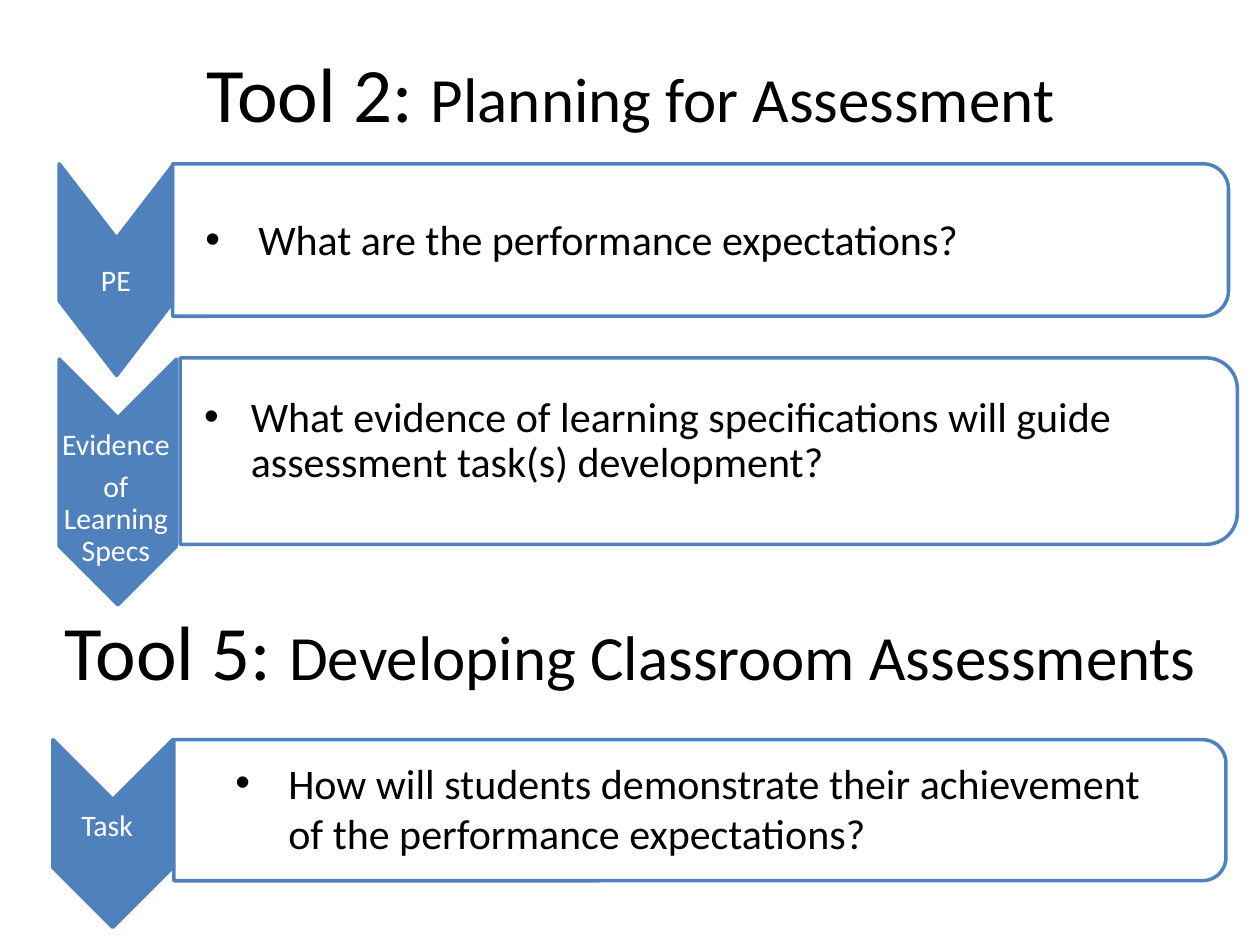
from dataclasses import dataclass
from lxml.etree import SubElement
from pptx import Presentation
from pptx.dml.color import RGBColor
from pptx.enum.shapes import MSO_SHAPE
from pptx.enum.text import MSO_ANCHOR, PP_ALIGN
from pptx.oxml.ns import qn
from pptx.util import Inches, Pt


@dataclass(frozen=True)
class Theme:
    font: str = "Calibri"
    blue: RGBColor = RGBColor(0x4F, 0x81, 0xBD)
    white: RGBColor = RGBColor(0xFF, 0xFF, 0xFF)
    black: RGBColor = RGBColor(0, 0, 0)
    tool: int = 44
    topic: int = 36
    question: int = 24
    label: int = 17
    outline: int = 2
    panel_opacity: int = 89


THEME = Theme()


@dataclass(frozen=True)
class Step:
    """One arrow and its panel; boxes are left, top, width, height in inches."""
    arrow: tuple
    point: float
    label_box: tuple
    label: tuple
    panel: tuple
    question_box: tuple
    question: str
    indent: tuple
    inset: tuple = (0.18, 0.02, 0.02, 0.02)
    anchor: MSO_ANCHOR = MSO_ANCHOR.MIDDLE
    spacing: float = 0.9


STEPS = (
    Step((0.47, 1.3, 0.91, 1.68), 0.65, (0.47, 1.96, 0.9, 0.56), ("PE",),
         (1.37, 1.3, 8.38, 1.21), (1.37, 1.37, 8.34, 1.1),
         "What are the performance expectations?", (0.5, -0.42)),
    Step((0.47, 2.85, 0.93, 1.95), 0.5, (0.47, 3.68, 0.9, 0.56),
         ("Evidence", "of Learning Specs"),
         (1.43, 2.84, 8.39, 1.48), (1.44, 2.88, 8.18, 1.25),
         "What evidence of learning specifications will guide "
         "assessment task(s) development?", (0.37, -0.37)),
    Step((0.42, 5.87, 0.95, 1.49), 0.5, (0.44, 6.27, 0.82, 0.59), ("Task",),
         (1.38, 5.87, 8.35, 1.12), (1.69, 5.91, 7.8, 0.68),
         "How will students demonstrate their achievement "
         "of the performance expectations?", (0.5, -0.42),
         (0.1, 0.1, 0.1, 0.1), MSO_ANCHOR.TOP, 1.0),
)


def style_run(run, size, color):
    run.font.name = THEME.font
    run.font.size = Pt(size)
    run.font.color.rgb = color


def add_text_frame(page, box, inset, anchor=MSO_ANCHOR.MIDDLE):
    frame = page.shapes.add_textbox(*map(Inches, box)).text_frame
    frame.word_wrap = True
    frame.vertical_anchor = anchor
    (frame.margin_left, frame.margin_top,
     frame.margin_right, frame.margin_bottom) = map(Inches, inset)
    return frame


def add_turned_shape(page, preset, box, adjustments, fill):
    """Add a shape turned a quarter clockwise so that it covers the box."""
    left, top, width, height = box
    shift = (width - height) / 2
    shape = page.shapes.add_shape(
        preset, *map(Inches, (left + shift, top - shift, height, width)))
    shape.rotation = 90
    shape.shadow.inherit = False
    for index, value in enumerate(adjustments):
        shape.adjustments[index] = value
    shape.fill.solid()
    shape.fill.fore_color.rgb = fill
    shape.line.color.rgb = THEME.blue
    shape.line.width = Pt(THEME.outline)
    return shape


def add_bullet(para, indent):
    properties = para._p.get_or_add_pPr()
    left, hanging = indent
    properties.set("marL", str(Inches(left)))
    properties.set("indent", str(Inches(hanging)))
    color = SubElement(properties, qn("a:buClr"))
    SubElement(color, qn("a:srgbClr"), val=str(THEME.black))
    SubElement(properties, qn("a:buFont"), typeface="Arial")
    SubElement(properties, qn("a:buChar"), char="•")


def add_heading(page, box, tool, topic):
    frame = add_text_frame(page, box, (0.1, 0.05, 0.1, 0.05))
    para = frame.paragraphs[0]
    para.alignment = PP_ALIGN.CENTER
    for text, size in ((tool, THEME.tool), (topic, THEME.topic)):
        run = para.add_run()
        run.text = text
        style_run(run, size, THEME.black)


def add_arrow(page, step):
    add_turned_shape(page, MSO_SHAPE.CHEVRON, step.arrow, (step.point,), THEME.blue)
    frame = add_text_frame(page, step.label_box, (0.01,) * 4)
    frame.text = "\n".join(step.label)
    for para in frame.paragraphs:
        para.alignment = PP_ALIGN.CENTER
        para.line_spacing = 0.9
        para.space_after = Pt(6)
        style_run(para.runs[0], THEME.label, THEME.white)


def add_panel(page, step):
    panel = add_turned_shape(page, MSO_SHAPE.ROUND_2_SAME_RECTANGLE,
                             step.panel, (0.167, 0), THEME.white)
    color = panel.fill._xPr.find(qn("a:solidFill"))[0]
    SubElement(color, qn("a:alpha"), val=str(THEME.panel_opacity * 1000))

    frame = add_text_frame(page, step.question_box, step.inset, step.anchor)
    frame.text = step.question
    para = frame.paragraphs[0]
    para.line_spacing = step.spacing
    para.space_after = Pt(3.5)
    add_bullet(para, step.indent)
    style_run(para.runs[0], THEME.question, THEME.black)


def main():
    deck = Presentation()
    deck.slide_width, deck.slide_height = Inches(10), Inches(7.5)
    page = deck.slides.add_slide(deck.slide_layouts[6])

    # Headings of the two tools
    add_heading(page, (0.17, 0.1, 9.67, 1.25), "Tool 2: ", "Planning for Assessment")
    add_heading(page, (0.17, 4.62, 9.67, 1.08), "Tool 5: ",
                "Developing Classroom Assessments")

    # Arrows with their question panels
    for step in STEPS:
        add_arrow(page, step)
        add_panel(page, step)

    deck.save("out.pptx")


if __name__ == "__main__":
    main()
